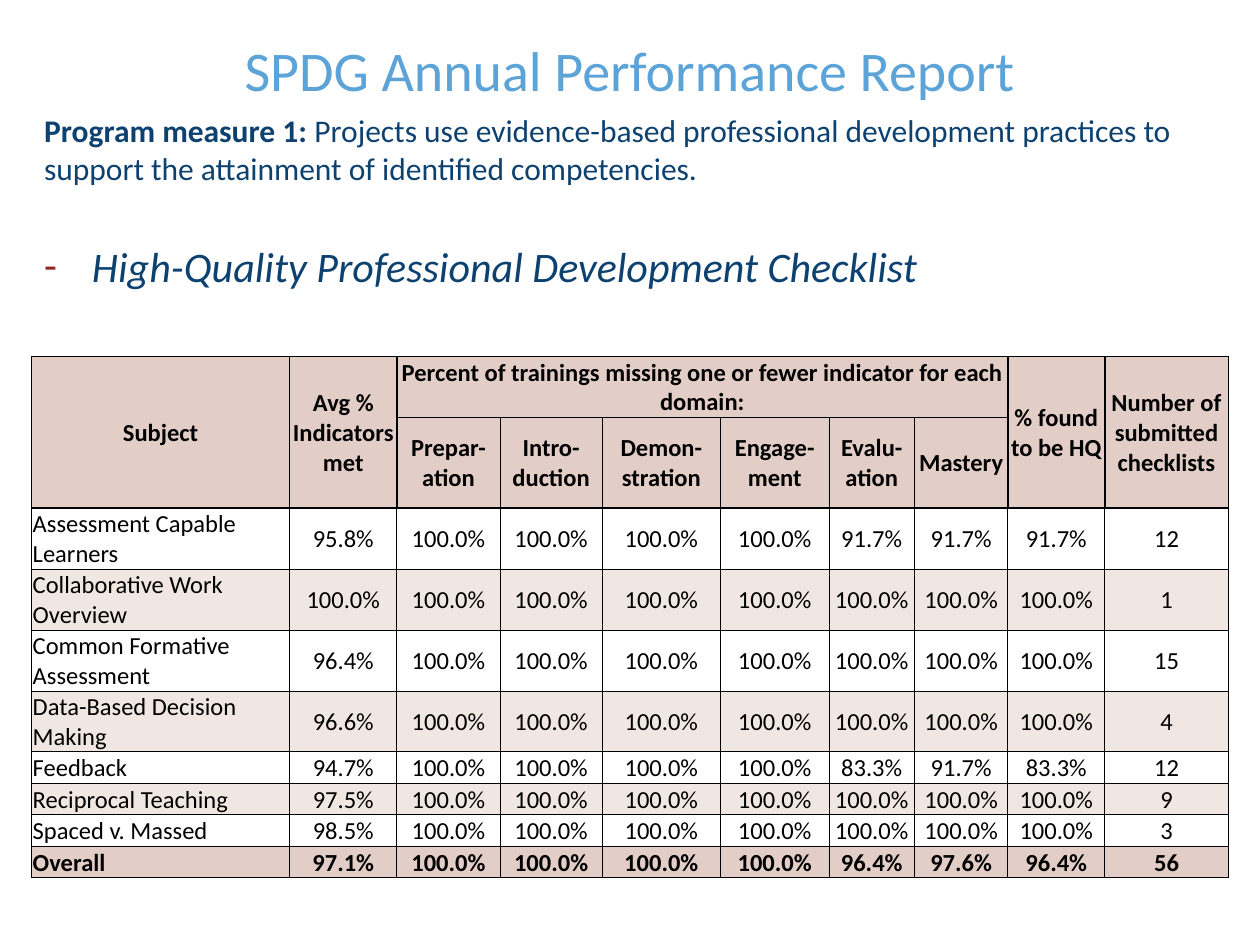
"""Build the annual performance report slide with its checklist table."""
from dataclasses import dataclass

from lxml import etree
from pptx import Presentation
from pptx.dml.color import RGBColor
from pptx.enum.text import MSO_ANCHOR, MSO_AUTO_SIZE, PP_ALIGN
from pptx.oxml.ns import qn
from pptx.util import Inches, Pt

MIDDLE = MSO_ANCHOR.MIDDLE
NO_AUTOFIT = MSO_AUTO_SIZE.NONE
LEFT, CENTER = PP_ALIGN.LEFT, PP_ALIGN.CENTER


@dataclass(frozen=True)
class Theme:
    """Colours, type sizes and line widths of the slide."""
    font: str = "Calibri"
    title: str = "5CA3D8"
    body: str = "0D4170"
    bullet: str = "95261F"
    ink: str = "000000"
    header_fill: str = "E2CEC7"
    band_fill: str = "F1E7E2"
    plain_fill: str = "FFFFFF"
    title_size: int = 32
    measure_size: int = 18
    checklist_size: int = 24
    table_size: int = 14
    thin: float = 0.5
    thick: float = 1


@dataclass(frozen=True)
class SubjectRow:
    """Results for one training subject."""
    subject: str
    indicators: str
    domains: tuple[str, ...]
    high_quality: str
    checklists: str

    def texts(self) -> tuple[str, ...]:
        """Return the cell texts from left to right."""
        return (self.subject, self.indicators, *self.domains, self.high_quality, self.checklists)


@dataclass(frozen=True)
class HeaderCell:
    """A header label with its place and span."""
    text: str
    row: int
    column: int
    rows: int = 1
    columns: int = 1


THEME = Theme()
FULL = "100.0%"
ALL_FULL = (FULL,) * 6
COLUMN_WIDTHS = (2.05, 0.85, 0.82, 0.81, 0.94, 0.86, 0.68, 0.74, 0.77, 0.98)
ROW_HEIGHTS = (0.48, 0.72) + (0.48,) * 4 + (0.25,) * 4
THICK_LEFT, THICK_RIGHT = (0, 2, 8, 9), (1, 7, 8, 9)
DOMAINS = ("Prepar-ation", "Intro-duction", "Demon-stration", "Engage-ment", "Evalu-ation", "Mastery")
HEADERS = (
    HeaderCell("Subject", 0, 0, rows=2),
    HeaderCell("Avg % Indicators met", 0, 1, rows=2),
    HeaderCell("Percent of trainings missing one or fewer indicator for each domain:", 0, 2, columns=6),
    HeaderCell("% found to be HQ", 0, 8, rows=2),
    HeaderCell("Number of submitted checklists", 0, 9, rows=2),
    *(HeaderCell(name, 1, column) for column, name in enumerate(DOMAINS, start=2)),
)
SUBJECTS = (
    SubjectRow("Assessment Capable Learners", "95.8%", (FULL,) * 4 + ("91.7%", "91.7%"), "91.7%", "12"),
    SubjectRow("Collaborative Work Overview", FULL, ALL_FULL, FULL, "1"),
    SubjectRow("Common Formative Assessment", "96.4%", ALL_FULL, FULL, "15"),
    SubjectRow("Data-Based Decision Making", "96.6%", ALL_FULL, FULL, "4"),
    SubjectRow("Feedback", "94.7%", (FULL,) * 4 + ("83.3%", "91.7%"), "83.3%", "12"),
    SubjectRow("Reciprocal Teaching", "97.5%", ALL_FULL, FULL, "9"),
    SubjectRow("Spaced v. Massed", "98.5%", ALL_FULL, FULL, "3"),
    SubjectRow("Overall", "97.1%", (FULL,) * 4 + ("96.4%", "97.6%"), "96.4%", "56"),
)


def style_span(span, size: int, color: str, bold: bool = False, italic: bool = False) -> None:
    """Format one run of text."""
    span.font.name = THEME.font
    span.font.size = Pt(size)
    span.font.bold = bold
    span.font.italic = italic
    span.font.color.rgb = RGBColor.from_string(color)


def place(box, left: float, top: float, width: float, height: float) -> None:
    """Move and size a placeholder and fix its text size."""
    box.left, box.top = Inches(left), Inches(top)
    box.width, box.height = Inches(width), Inches(height)
    box.text_frame.word_wrap = True
    box.text_frame.auto_size = NO_AUTOFIT


def set_bullet(para, mark: str = "", indent: float = 0) -> None:
    """Give a paragraph a coloured bullet, or none when the mark is empty."""
    properties = para._p.get_or_add_pPr()
    properties.set("marL", str(Inches(indent)))
    properties.set("indent", str(-Inches(indent)))
    if not mark:
        etree.SubElement(properties, qn("a:buNone"))
        return
    color = etree.SubElement(properties, qn("a:buClr"))
    etree.SubElement(color, qn("a:srgbClr"), val=THEME.bullet)
    etree.SubElement(properties, qn("a:buFont"), typeface=THEME.font)
    etree.SubElement(properties, qn("a:buChar"), char=mark)


def fill_title(box) -> None:
    """Write the slide title."""
    place(box, 0.5, 0.17, 9, 0.75)
    box.text_frame.text = "SPDG Annual Performance Report"
    box.text_frame.vertical_anchor = MIDDLE
    para = box.text_frame.paragraphs[0]
    para.alignment = CENTER
    style_span(para.runs[0], THEME.title_size, THEME.title)


def fill_body(box) -> None:
    """Write the program measure and the checklist line."""
    place(box, 0.25, 0.83, 9.5, 6.5)
    measure = box.text_frame.paragraphs[0]
    checklist = box.text_frame.add_paragraph()
    measure.space_before = Pt(0)
    checklist.space_before = Pt(31)
    set_bullet(measure)
    set_bullet(checklist, "-", 0.38)
    parts = (
        ("Program measure 1: ", True),
        ("Projects use evidence-based professional development practices to support "
         "the attainment of identified competencies.", False),
    )
    for text, bold in parts:
        span = measure.add_run()
        span.text = text
        style_span(span, THEME.measure_size, THEME.body, bold=bold)
    checklist.text = "High-Quality Professional Development Checklist"
    style_span(checklist.runs[0], THEME.checklist_size, THEME.body, italic=True)


def style_cell(cell, row: int, column: int) -> None:
    """Set the fill, margins and borders that belong to a table position."""
    header = row < 2
    thick_sides = {
        "L": header and column in THICK_LEFT,
        "R": header and column in THICK_RIGHT,
        "T": row in (0, 2),
        "B": row == 1,
    }
    properties = cell._tc.get_or_add_tcPr()
    for side, thick in thick_sides.items():
        width = THEME.thick if thick else THEME.thin
        line = etree.SubElement(properties, qn(f"a:ln{side}"), w=str(Pt(width)))
        fill = etree.SubElement(line, qn("a:solidFill"))
        etree.SubElement(fill, qn("a:srgbClr"), val=THEME.ink)
    body_fill = THEME.band_fill if row % 2 else THEME.plain_fill
    shade = THEME.header_fill if header or row == len(ROW_HEIGHTS) - 1 else body_fill
    cell.fill.solid()
    cell.fill.fore_color.rgb = RGBColor.from_string(shade)
    cell.margin_left = cell.margin_right = cell.margin_top = Inches(0.01)
    cell.margin_bottom = 0
    cell.vertical_anchor = MIDDLE


def write_cell(cell, text: str, align: PP_ALIGN, bold: bool) -> None:
    """Write one table cell."""
    cell.text_frame.text = text
    para = cell.text_frame.paragraphs[0]
    para.alignment = align
    style_span(para.runs[0], THEME.table_size, THEME.ink, bold=bold)


def add_checklist_table(slide) -> None:
    """Add the table of checklist results."""
    frame = slide.shapes.add_table(
        len(ROW_HEIGHTS), len(COLUMN_WIDTHS), Inches(0.25), Inches(2.83),
        Inches(sum(COLUMN_WIDTHS)), Inches(sum(ROW_HEIGHTS)))
    table = frame.table
    table.first_row = table.horz_banding = False
    for column, width in zip(table.columns, COLUMN_WIDTHS):
        column.width = Inches(width)
    for row, height in zip(table.rows, ROW_HEIGHTS):
        row.height = Inches(height)
    for row in range(len(ROW_HEIGHTS)):
        for column in range(len(COLUMN_WIDTHS)):
            style_cell(table.cell(row, column), row, column)
    for header in HEADERS:
        cell = table.cell(header.row, header.column)
        if header.rows * header.columns > 1:
            cell.merge(table.cell(header.row + header.rows - 1, header.column + header.columns - 1))
        write_cell(cell, header.text, CENTER, True)
    for row, subject in enumerate(SUBJECTS, start=2):
        for column, text in enumerate(subject.texts()):
            write_cell(table.cell(row, column), text, CENTER if column else LEFT, subject is SUBJECTS[-1])


def main() -> None:
    """Build and save the deck."""
    deck = Presentation()
    deck.slide_width, deck.slide_height = Inches(10), Inches(7.5)
    page = deck.slides.add_slide(deck.slide_layouts[1])
    fill_title(page.shapes.title)
    fill_body(page.placeholders[1])
    add_checklist_table(page)
    deck.save("out.pptx")


if __name__ == "__main__":
    main()
